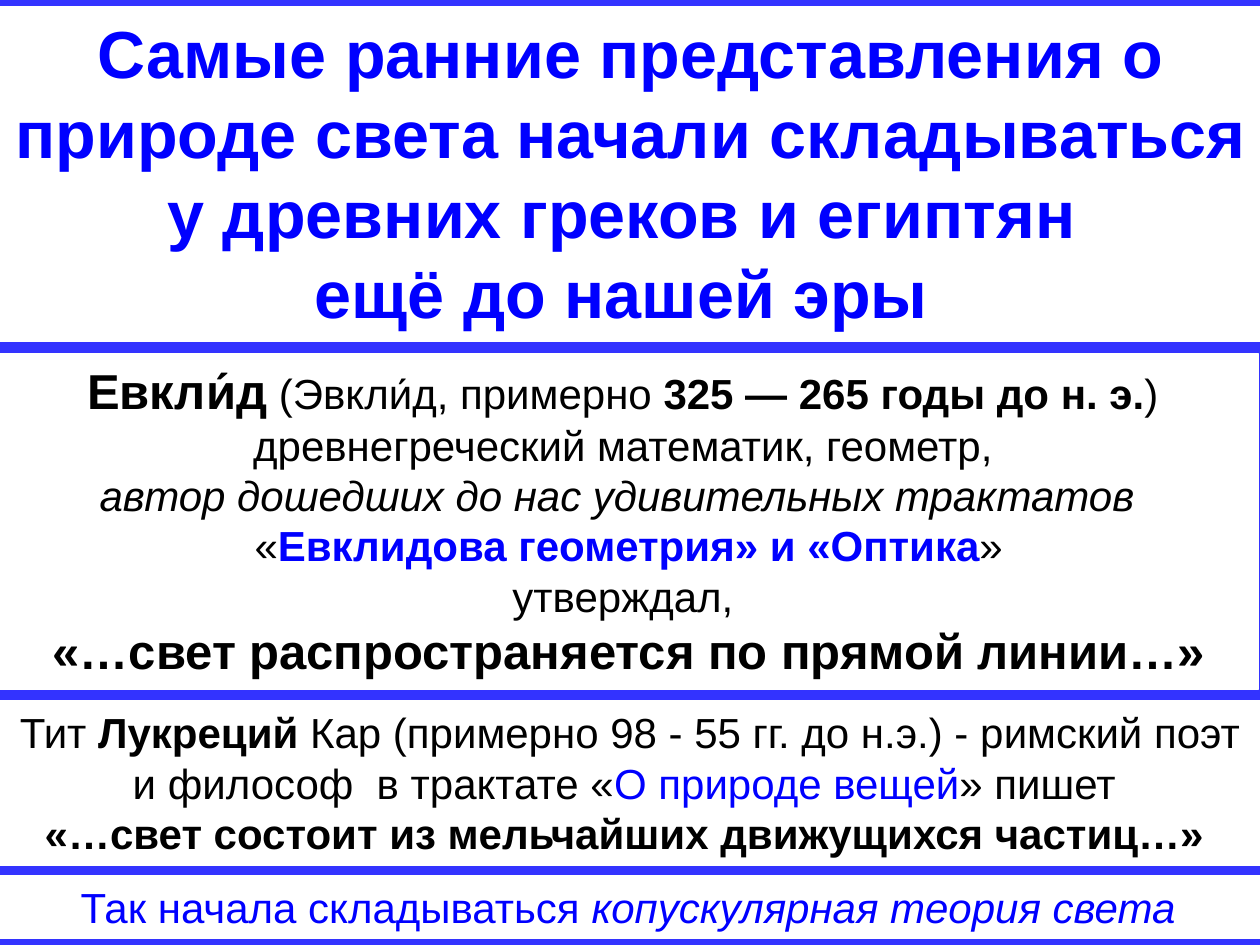
from typing import NamedTuple

from pptx import Presentation
from pptx.dml.color import RGBColor
from pptx.enum.shapes import MSO_SHAPE
from pptx.enum.text import MSO_ANCHOR, MSO_AUTO_SIZE, PP_ALIGN
from pptx.slide import Slide
from pptx.util import Pt

BACK = RGBColor(0x33, 0x33, 0xFF)
WHITE = RGBColor(0xFF, 0xFF, 0xFF)
BLACK = RGBColor(0, 0, 0)
BLUE = RGBColor(0, 0, 0xFF)


class Run(NamedTuple):
    text: str
    size: float = 24
    color: RGBColor = BLACK
    bold: bool = False
    italic: bool = False


class Panel(NamedTuple):
    left: float
    top: float
    width: float
    height: float
    lines: list[list[Run]]


def title(text: str) -> list[Run]:
    return [Run(text, 38, BLUE, bold=True)]


PANELS = [
    Panel(-0.72, 202.3, 720, 191.5, [
        [
            Run("Евкли́д", 28, bold=True),
            Run(" (Эвкли́д, примерно "),
            Run("325 — 265 годы до н. э.", bold=True),
            Run(") "),
        ],
        [Run("древнегреческий математик, геометр, ")],
        [Run("автор дошедших до нас удивительных трактатов  ", italic=True)],
        [
            Run("«"),
            Run("Евклидова геометрия» и «Оптика", color=BLUE, bold=True),
            Run("»"),
        ],
        [Run("утверждал, ")],
        [Run("«…свет распространяется по прямой линии…»", 28, bold=True)],
    ]),
    Panel(0, 400.3, 720, 94.3, [
        [
            Run("Тит "),
            Run("Лукреций", bold=True),
            Run(" Кар (примерно 98 - 55 гг. до н.э.) - римский поэт "
                "и философ  в трактате «"),
            Run("О природе вещей", color=BLUE),
            Run("» пишет "),
        ],
        [Run("«…свет состоит из мельчайших движущихся частиц…» ", bold=True)],
    ]),
    Panel(-0.72, 3.6, 722.2, 191.5, [
        title("Самые ранние представления о природе света начали складываться "),
        title("у древних греков и египтян "),
        title("ещё до нашей эры "),
    ]),
    Panel(-2.16, 500.4, 722.2, 36, [
        [
            Run("Так начала складываться ", color=BLUE),
            Run("копускулярная теория света", color=BLUE, italic=True),
        ],
    ]),
]


def draw(slide: Slide, panel: Panel) -> None:
    box = slide.shapes.add_shape(
        MSO_SHAPE.RECTANGLE, Pt(panel.left), Pt(panel.top),
        Pt(panel.width), Pt(panel.height))
    box.shadow.inherit = False
    box.fill.solid()
    box.fill.fore_color.rgb = WHITE
    box.line.color.rgb = WHITE
    box.line.width = Pt(0.75)
    frame = box.text_frame
    frame.word_wrap = True
    frame.auto_size = MSO_AUTO_SIZE.SHAPE_TO_FIT_TEXT
    frame.vertical_anchor = MSO_ANCHOR.TOP
    for index, line in enumerate(panel.lines):
        para = frame.add_paragraph() if index else frame.paragraphs[0]
        para.alignment = PP_ALIGN.CENTER
        for item in line:
            run = para.add_run()
            run.text = item.text
            font = run.font
            font.name = "Arial"
            font.size = Pt(item.size)
            font.bold = item.bold
            font.italic = item.italic
            font.color.rgb = item.color


def main() -> None:
    deck = Presentation()
    deck.slide_width = Pt(720)
    deck.slide_height = Pt(540)
    slide = deck.slides.add_slide(deck.slide_layouts[6])
    slide.background.fill.solid()
    slide.background.fill.fore_color.rgb = BACK
    for panel in PANELS:
        draw(slide, panel)
    deck.save("out.pptx")


if __name__ == "__main__":
    main()
